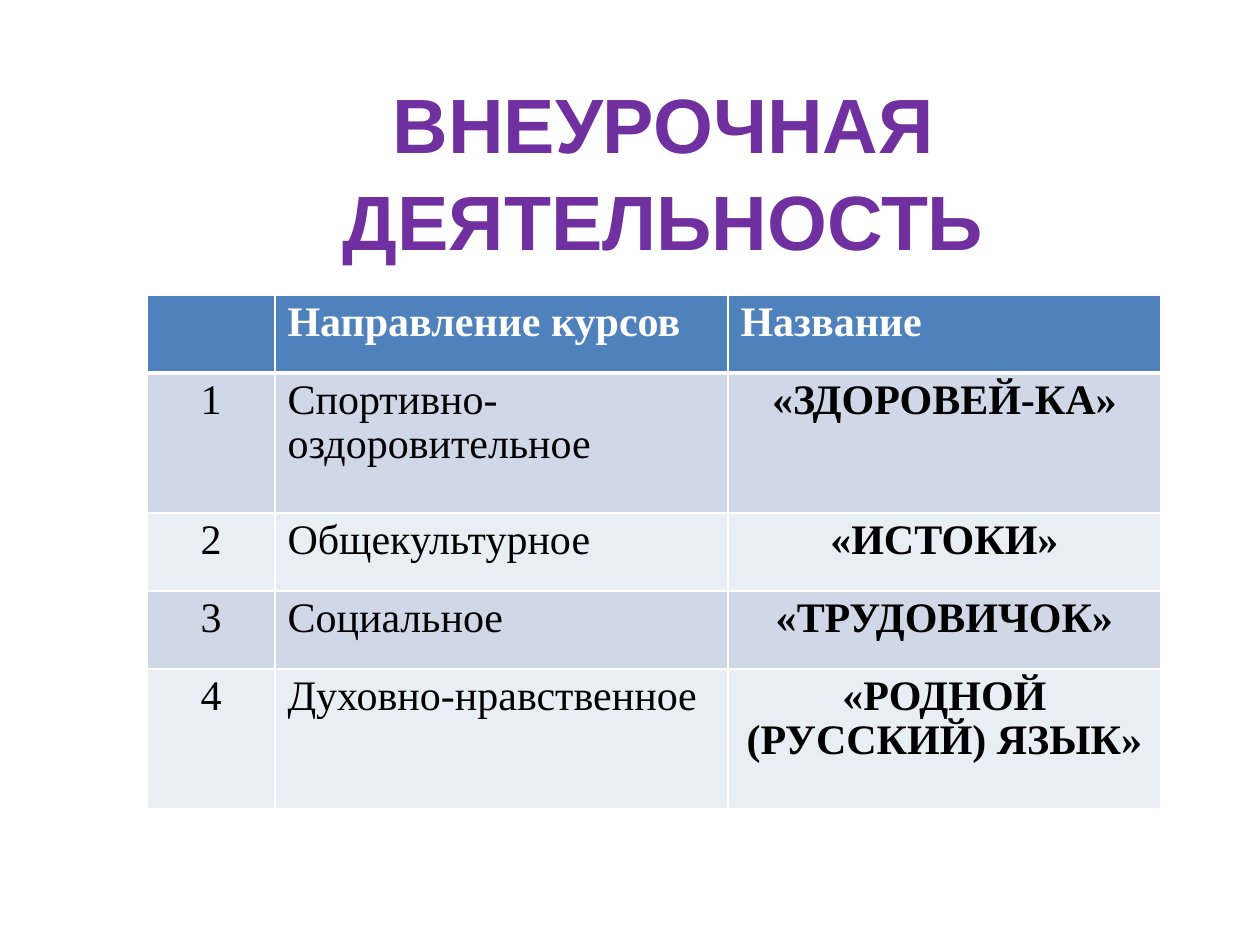
"""Build a slide with a title and a table of after-school courses."""
from pptx import Presentation
from pptx.dml.color import RGBColor as Rgb
from pptx.enum.text import MSO_ANCHOR as Anchor, MSO_AUTO_SIZE as Fit, PP_ALIGN as Align
from pptx.oxml import parse_xml
from pptx.oxml.ns import nsdecls
from pptx.util import Pt

TITLE = "ВНЕУРОЧНАЯ ДЕЯТЕЛЬНОСТЬ"
ROWS = [
    ("", "Направление курсов", "Название"),
    ("1", "Спортивно-оздоровительное", "«ЗДОРОВЕЙ-КА»"),
    ("2", "Общекультурное", "«ИСТОКИ»"),
    ("3", "Социальное", "«ТРУДОВИЧОК»"),
    ("4", "Духовно-нравственное", "«РОДНОЙ (РУССКИЙ) ЯЗЫК»"),
]
WIDTHS = [128, 453, 433]
HEIGHTS = [78, 140, 78, 78, 140]
ALIGNS = [Align.CENTER, Align.LEFT, Align.CENTER]
THEME = {
    "title": ("Arial", 44, "7030A0"),
    "head": ("Times New Roman", 24, "FFFFFF"),
    "body": ("Times New Roman", 24, "000000"),
    "top": "4F81BD",
    "bands": ["E9EDF4", "D0D8E8"],
    "line": "FFFFFF",
}
PX = 914400 // 126


def px(*vals):
    return [round(v * PX) for v in vals]


def style(par, key, bold, align, gap):
    face, size, color = THEME[key]
    par.alignment, par.line_spacing = align, gap
    font = par.font
    font.name, font.size, font.bold = face, Pt(size), bold
    font.color.rgb = Rgb.from_string(color)


def border(cell, top, base):
    props = cell._tc.get_or_add_tcPr()
    sides = {"L": 1, "R": 1, "T": top, "B": base}
    for i, (side, width) in enumerate(sides.items()):
        props.insert(i, parse_xml(
            f'<a:ln{side} {nsdecls("a")} w="{Pt(width)}"><a:solidFill>'
            f'<a:srgbClr val="{THEME["line"]}"/></a:solidFill></a:ln{side}>'))


def add_title(slide):
    title = slide.shapes.title
    title.left, title.top, title.width, title.height = px(213, 66, 901, 199)
    frame = title.text_frame
    frame.text = TITLE
    frame.word_wrap, frame.auto_size = True, Fit.NONE
    frame.vertical_anchor = Anchor.TOP
    style(frame.paragraphs[0], "title", True, Align.CENTER, 1.05)


def add_grid(slide):
    box = px(147, 295, sum(WIDTHS), sum(HEIGHTS))
    grid = slide.shapes.add_table(len(ROWS), len(WIDTHS), *box).table
    for col, width in zip(grid.columns, px(*WIDTHS)):
        col.width = width
    for row, height in zip(grid.rows, px(*HEIGHTS)):
        row.height = height
    for r, texts in enumerate(ROWS):
        head = r == 0
        fill = THEME["top"] if head else THEME["bands"][r % 2]
        for c, text in enumerate(texts):
            cell = grid.cell(r, c)
            cell.text = text
            cell.fill.solid()
            cell.fill.fore_color.rgb = Rgb.from_string(fill)
            border(cell, 3 if r == 1 else 1, 3 if head else 1)
            style(cell.text_frame.paragraphs[0], "head" if head else "body",
                  head or c == 2, Align.LEFT if head else ALIGNS[c], 0.95)


def main():
    deck = Presentation()
    deck.slide_width, deck.slide_height = px(1260, 945)
    slide = deck.slides.add_slide(deck.slide_layouts[5])
    add_title(slide)
    add_grid(slide)
    deck.save("out.pptx")


if __name__ == "__main__":
    main()
